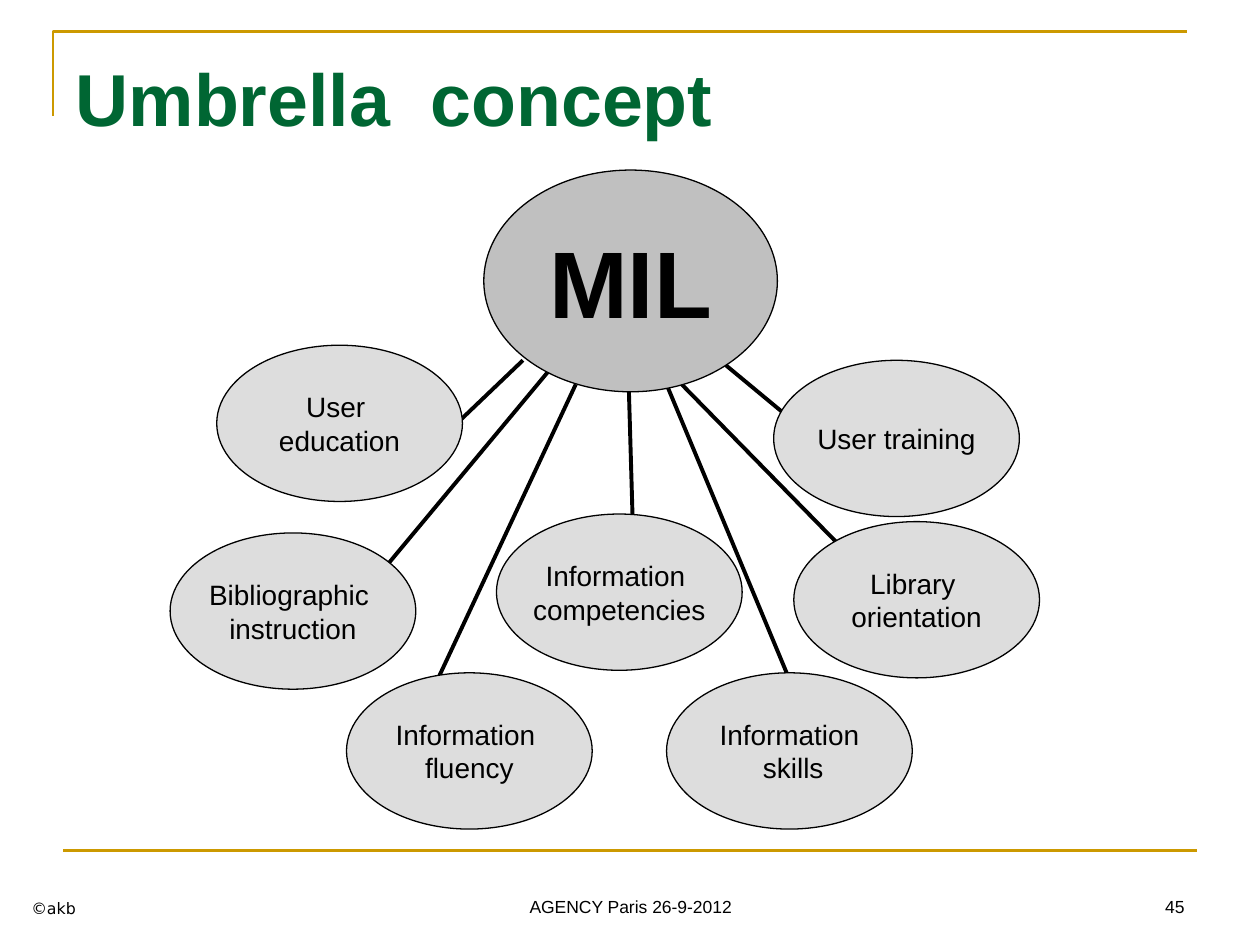
from lxml.etree import SubElement
from pptx import Presentation
from pptx.dml.color import RGBColor
from pptx.enum.shapes import MSO_CONNECTOR as Connector, MSO_SHAPE as Shape
from pptx.enum.text import MSO_ANCHOR as Anchor, PP_ALIGN as Align
from pptx.oxml.ns import qn
from pptx.util import Inches, Pt

WIDTH, HEIGHT = 10, 7.5
GOLD, GREEN, BLACK = "CC9900", "006633", "000000"
HUB_FILL, TERM_FILL = "C0C0C0", "DDDDDD"
TERM_EXTENT = (1.95, 1.24)
FOOTER_TOP, FOOTER_HEIGHT = 6.83, 0.5

TERMS = [
    ("Information \ncompetencies", (3.94, 4.08), (4.99, 3.05), (5.02, 4.08)),
    ("User training", (6.14, 2.86), (5.75, 2.89), (6.51, 3.52)),
    ("Library \norientation", (6.3, 4.14), (5.41, 3.05), (6.89, 4.56)),
    ("Information\n skills", (5.29, 5.34), (5.29, 3.05), (6.26, 5.38)),
    ("Information \nfluency", (2.75, 5.34), (4.57, 3.05), (3.47, 5.4)),
    ("Bibliographic \ninstruction", (1.35, 4.23), (4.4, 2.89), (3.01, 4.56)),
    ("User \neducation", (1.72, 2.74), (4.15, 2.86), (3.47, 3.51)),
]

FOOTERS = [
    ("©akb", 0.15, 2.33, dict(size=9, font="DejaVu Sans", align=Align.LEFT)),
    ("AGENCY Paris 26-9-2012", 3.42, 3.17, dict(size=10)),
    ("45", 7.17, 2.33, dict(size=10, align=Align.RIGHT)),
]


def color(value):
    return RGBColor.from_string(value)


def inches(*lengths):
    return [Inches(length) for length in lengths]


def write(frame, text, size=16, font="Arial", fill=BLACK, bold=False,
          align=Align.CENTER, anchor=Anchor.MIDDLE, wrap=True):
    frame.word_wrap = wrap
    frame.vertical_anchor = anchor
    for index, line in enumerate(text.split("\n")):
        paragraph = frame.paragraphs[0] if index == 0 else frame.add_paragraph()
        paragraph.alignment = align
        run = paragraph.add_run()
        run.text = line
        run.font.size = Pt(size)
        run.font.name = font
        run.font.bold = bold
        run.font.color.rgb = color(fill)


def set_line(shape, value, width):
    shape.line.color.rgb = color(value)
    shape.line.width = Pt(width)


def add_line(shapes, start, end, value, width):
    line = shapes.add_connector(Connector.STRAIGHT, *inches(*start, *end))
    set_line(line, value, width)
    SubElement(line._element.spPr, qn("a:effectLst"))


def add_ellipse(shapes, text, position, extent, background, **text_format):
    ellipse = shapes.add_shape(Shape.OVAL, *inches(*position, *extent))
    ellipse.shadow.inherit = False
    ellipse.fill.solid()
    ellipse.fill.fore_color.rgb = color(background)
    set_line(ellipse, BLACK, 0.75)
    frame = ellipse.text_frame
    frame.margin_left = frame.margin_right = 0
    frame.margin_top = frame.margin_bottom = 0
    write(frame, text, wrap=False, **text_format)


def add_frame(shapes):
    builder = shapes.build_freeform(*inches(0.42, 0.92), scale=1.0)
    builder.add_line_segments(
        [inches(0.42, 0.25), inches(9.42, 0.25)], close=False)
    corner = builder.convert_to_shape()
    corner.shadow.inherit = False
    corner.fill.background()
    set_line(corner, GOLD, 1.5)
    add_line(shapes, (0.5, 6.75), (9.5, 6.75), GOLD, 1.5)


def add_title(slide, text):
    title = slide.shapes.title
    title.left, title.top, title.width, title.height = inches(0.5, 0.3, 9, 1.25)
    title.text_frame.margin_top = Inches(0.12)
    write(title.text_frame, text, size=42, fill=GREEN, bold=True,
          align=Align.LEFT, anchor=Anchor.TOP)


def add_umbrella(slide):
    shapes = slide.shapes.add_group_shape().shapes
    for text, position, start, end in TERMS:
        add_line(shapes, start, end, BLACK, 2.25)
        add_ellipse(shapes, text, position, TERM_EXTENT, TERM_FILL)
    add_ellipse(shapes, "MIL", (3.84, 1.35), (2.33, 1.76), HUB_FILL,
                size=54, bold=True)


def add_footers(slide):
    for text, left, width, text_format in FOOTERS:
        box = slide.shapes.add_textbox(
            *inches(left, FOOTER_TOP, width, FOOTER_HEIGHT))
        write(box.text_frame, text, anchor=Anchor.BOTTOM, **text_format)


def main():
    presentation = Presentation()
    presentation.slide_width, presentation.slide_height = inches(WIDTH, HEIGHT)
    slide = presentation.slides.add_slide(presentation.slide_layouts[5])
    add_frame(slide.shapes)
    add_title(slide, "Umbrella  concept")
    add_umbrella(slide)
    add_footers(slide)
    presentation.save("out.pptx")


if __name__ == "__main__":
    main()
